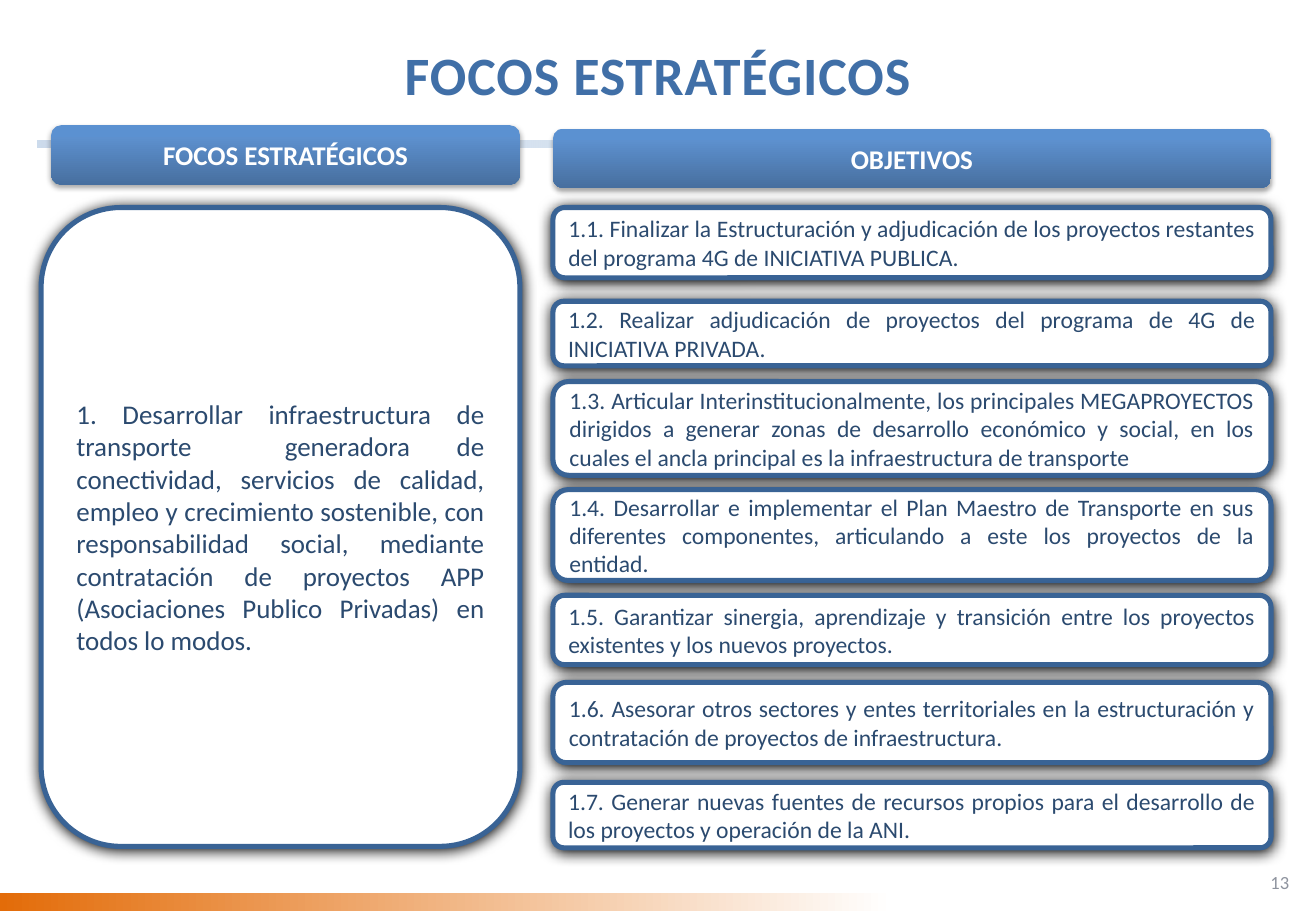
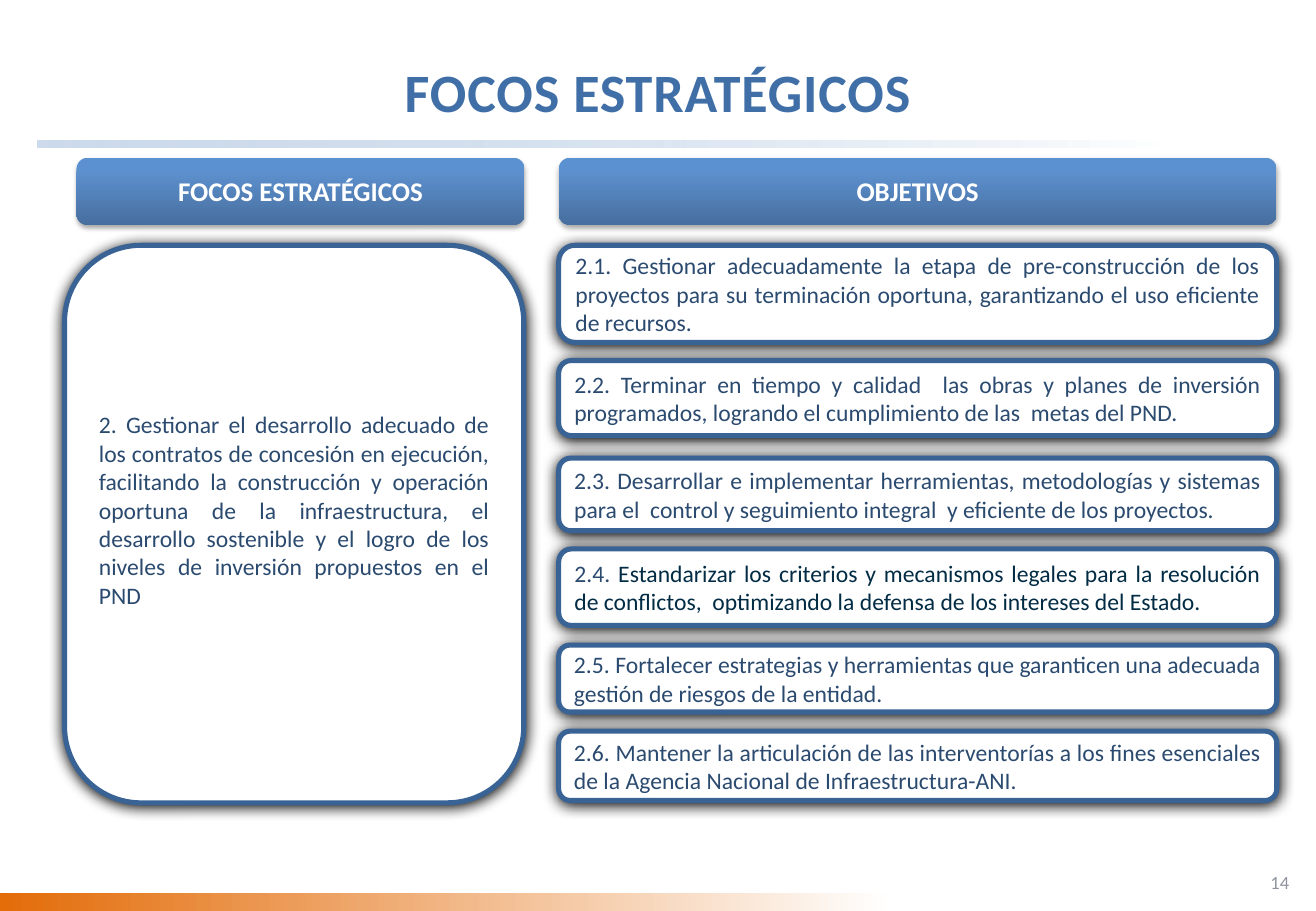
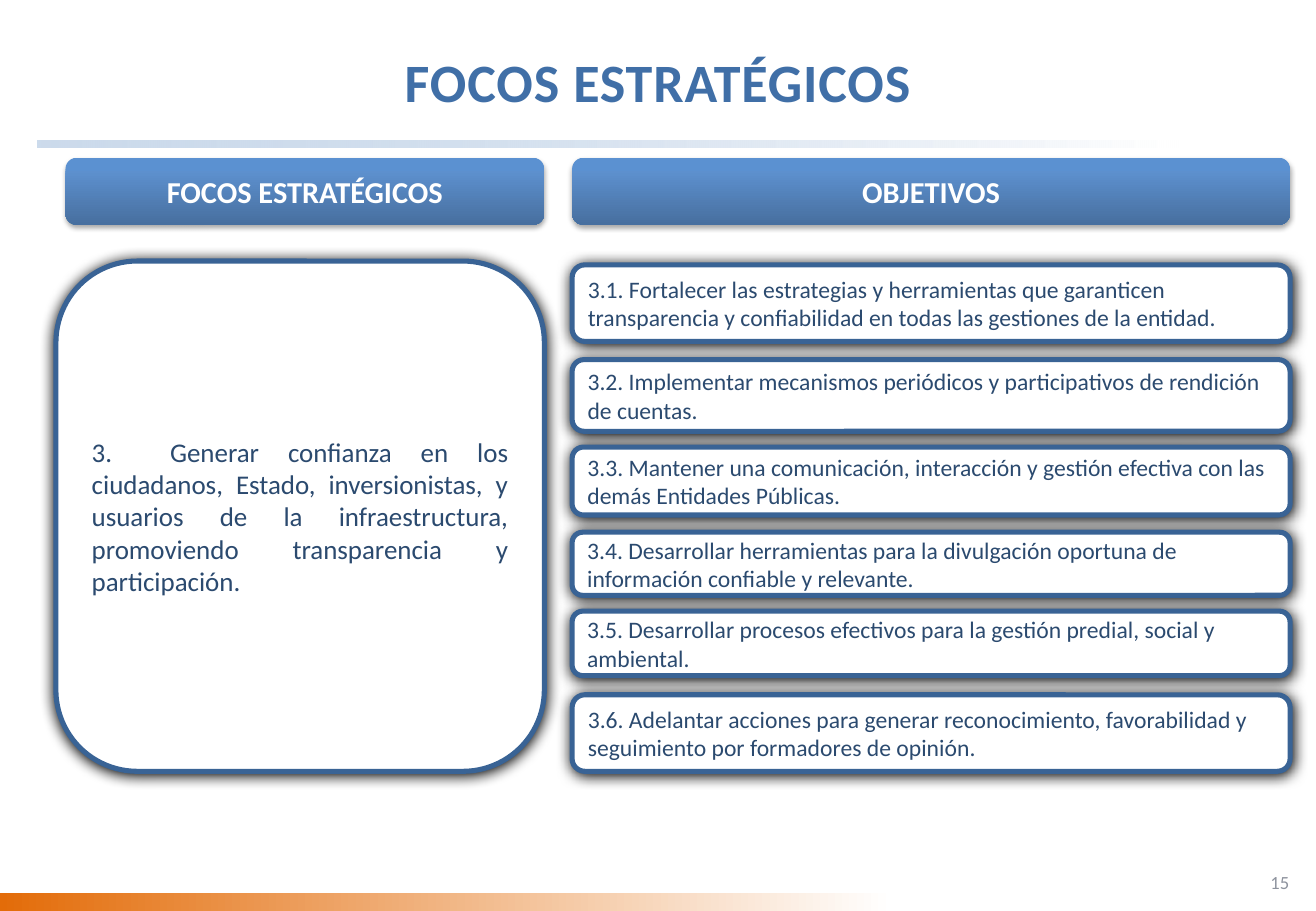
from lxml import etree
from pptx import Presentation
from pptx.dml.color import RGBColor
from pptx.enum.shapes import MSO_SHAPE as SHAPE
from pptx.enum.text import MSO_ANCHOR as ANCHOR, PP_ALIGN as ALIGN
from pptx.oxml.ns import qn
from pptx.util import Cm, Pt

rgb = RGBColor.from_string

FONT = "Calibri"
TITLE, NAVY, DARK, BORDER = "406FA7", "2B4A6F", "022B44", "396395"
WHITE, GREY = "FFFFFF", "8E939E"
# Gradient stops: position %, colour, opacity %
RULE = [(0, "9AB7D9", 50), (100, WHITE, 100)]
FOOTER = [(0, "E36C09", 100), (100, WHITE, 100)]
HEADER = [(0, "5B91D1", 100), (20, "5D90CE", 100), (100, "476F9F", 100)]
# Shadows: blur pt, distance pt, opacity %
SOFT, STRONG = (3.1, 1.8, 35), (8.5, 1, 100)
GOAL_WIDTH = 15.01

SLIDES = [
    dict(
        number="13", title_top=0.74, head_size=16, focus_size=16, goal_align=ALIGN.JUSTIFY,
        heads=[(1.07, 2.62, 9.8, 1.24), (11.56, 2.69, GOAL_WIDTH, 1.24)],
        focus_at=(0.86, 4.34, 10.01, 13.36), focus_bottom=0.13,
        focus="1. Desarrollar infraestructura de transporte  generadora de conectividad, "
              "servicios de calidad, empleo y crecimiento sostenible, con responsabilidad "
              "social, mediante contratación de proyectos APP (Asociaciones Publico Privadas) "
              "en todos lo modos.",
        goals=[
            (4.34, 1.47, "1.1. Finalizar la Estructuración y adjudicación de los proyectos "
                         "restantes del programa 4G de INICIATIVA PUBLICA."),
            (6.3, 1.35, "1.2. Realizar adjudicación de proyectos del programa de 4G de "
                        "INICIATIVA PRIVADA."),
            (7.98, 1.96, "1.3. Articular Interinstitucionalmente, los principales MEGAPROYECTOS "
                         "dirigidos a generar zonas de desarrollo económico y social, en los "
                         "cuales el ancla principal es la infraestructura de transporte"),
            (10.24, 1.9, "1.4. Desarrollar e implementar el Plan Maestro de Transporte en sus "
                         "diferentes componentes, articulando a este los proyectos de la entidad."),
            (12.45, 1.45, "1.5. Garantizar sinergia, aprendizaje y transición entre los "
                          "proyectos existentes y los nuevos proyectos."),
            (14.27, 1.68, "1.6. Asesorar otros sectores y entes territoriales en la "
                          "estructuración y contratación de proyectos de infraestructura."),
            (16.36, 1.37, "1.7. Generar nuevas fuentes de recursos propios para el desarrollo "
                          "de los proyectos y operación de la ANI."),
        ],
    ),
    dict(
        number="14", title_top=1.09, head_size=16, focus_size=14, goal_align=ALIGN.JUSTIFY,
        heads=[(1.6, 3.3, 9.37, 1.4), (11.68, 3.3, GOAL_WIDTH, 1.4)],
        focus_at=(1.35, 5.13, 9.6, 11.66), focus_bottom=0.73,
        focus="2. Gestionar el desarrollo adecuado de los contratos de concesión en ejecución, "
              "facilitando la construcción y operación oportuna de la infraestructura, el "
              "desarrollo sostenible y el logro de los niveles de inversión propuestos en el PND",
        goals=[
            (5.13, 2.03, "2.1. Gestionar adecuadamente la etapa de pre-construcción de los "
                         "proyectos para su terminación oportuna, garantizando el uso eficiente "
                         "de recursos."),
            (7.54, 1.57, "2.2. Terminar en tiempo y calidad  las obras y planes de inversión "
                         "programados, logrando el cumplimiento de las  metas del PND."),
            (9.58, 1.52, "2.3. Desarrollar e implementar herramientas, metodologías y sistemas "
                         "para el  control y seguimiento integral  y eficiente de los proyectos."),
            (11.48, 1.6, "2.4. ",
             "Estandarizar los criterios y mecanismos legales para la resolución de "
             "conflictos,  optimizando la defensa de los intereses del Estado."),
            (13.49, 1.4, "2.5. Fortalecer estrategias y herramientas que garanticen una "
                         "adecuada gestión de riesgos de la entidad."),
            (15.29, 1.45, "2.6. Mantener la articulación de las interventorías a los fines "
                          "esenciales de la Agencia Nacional de Infraestructura-ANI."),
        ],
    ),
    dict(
        number="15", title_top=0.89, head_size=18, focus_size=16, goal_align=ALIGN.LEFT,
        heads=[(1.37, 3.3, 10.01, 1.4), (11.96, 3.3, GOAL_WIDTH, 1.4)],
        focus_at=(1.17, 5.46, 10.21, 10.67), focus_bottom=0.13,
        focus="3.  Generar confianza en los ciudadanos, Estado, inversionistas, y usuarios de "
              "la infraestructura, promoviendo transparencia y participación.",
        goals=[
            (5.54, 1.6, "3.1. Fortalecer las estrategias y herramientas que garanticen "
                        "transparencia y confiabilidad en todas las gestiones de la entidad."),
            (7.52, 1.5, "3.2. Implementar mecanismos periódicos y participativos de rendición "
                        "de cuentas."),
            (9.35, 1.42, "3.3. Mantener una comunicación, interacción y gestión efectiva con "
                         "las demás Entidades Públicas."),
            (11.13, 1.32, "3.4. Desarrollar herramientas para la divulgación oportuna de "
                          "información confiable y relevante."),
            (12.78, 1.35, "3.5. Desarrollar procesos efectivos para la gestión predial, social "
                          "y ambiental."),
            (14.53, 1.6, "3.6. Adelantar acciones para generar reconocimiento, favorabilidad y "
                         "seguimiento por formadores de opinión."),
        ],
    ),
]


def add_box(s, kind, at, stops=None, angle=0, shadow=None):
    """Add a borderless gradient shape, or a white bordered card when no stops are given."""
    sp = s.shapes.add_shape(kind, *map(Cm, at))
    if stops:
        sp.line.fill.background()
        sp.fill.gradient()
        sp.fill.gradient_angle = angle
        stop_list = sp._element.spPr.find(".//" + qn("a:gsLst"))
        for old in list(stop_list):
            stop_list.remove(old)
        for pos, color, alpha in stops:
            gs = etree.SubElement(stop_list, qn("a:gs"), pos=str(pos * 1000))
            clr = etree.SubElement(gs, qn("a:srgbClr"), val=color)
            etree.SubElement(clr, qn("a:alpha"), val=str(alpha * 1000))
    else:
        sp.fill.solid()
        sp.fill.fore_color.rgb = rgb(WHITE)
        sp.line.color.rgb = rgb(BORDER)
        sp.line.width = Pt(3)
    sp.shadow.inherit = False
    if shadow:
        blur, dist, alpha = shadow
        outer = etree.SubElement(sp._element.spPr.find(qn("a:effectLst")), qn("a:outerShdw"),
                                 blurRad=str(Pt(blur)), dist=str(Pt(dist)),
                                 dir="5400000", rotWithShape="0")
        clr = etree.SubElement(outer, qn("a:srgbClr"), val="000000")
        etree.SubElement(clr, qn("a:alpha"), val=str(alpha * 1000))
    return sp


def write(sp, text, size, color, align=ALIGN.CENTER, bold=False, anchor=ANCHOR.MIDDLE):
    """Fill a shape with one paragraph and return the paragraph."""
    tf = sp.text_frame
    tf.word_wrap = True
    tf.vertical_anchor = anchor
    p = tf.paragraphs[0]
    p.alignment = align
    p.font.name, p.font.size, p.font.bold = FONT, Pt(size), bold
    p.font.color.rgb = rgb(color)
    r = p.add_run()
    r.text = text
    r.font.color.rgb = rgb(color)
    return p


prs = Presentation()
prs.slide_width, prs.slide_height = Cm(27.51), Cm(19.05)

for page in SLIDES:
    s = prs.slides.add_slide(prs.slide_layouts[6])
    add_box(s, SHAPE.RECTANGLE, (0.79, 2.95, 23.85, 0.13), RULE)
    add_box(s, SHAPE.RECTANGLE, (0, 18.67, 18.67, 0.38), FOOTER)
    number = s.shapes.add_textbox(Cm(26.16), Cm(17.93), Cm(1.19), Cm(1.02))
    write(number, page["number"], 11, GREY)

    title = s.shapes.add_textbox(0, Cm(page["title_top"]), prs.slide_width, Cm(1.63))
    p = write(title, "FOCOS ESTRATÉGICOS", 32, TITLE, bold=True, anchor=ANCHOR.TOP)
    p.runs[0]._r.get_or_add_rPr().set("spc", "50")

    for at, text in zip(page["heads"], ("FOCOS ESTRATÉGICOS", "OBJETIVOS")):
        head = add_box(s, SHAPE.ROUNDED_RECTANGLE, at, HEADER, 270, SOFT)
        write(head, text, page["head_size"], WHITE, bold=True)

    focus = add_box(s, SHAPE.ROUNDED_RECTANGLE, page["focus_at"], shadow=STRONG)
    write(focus, page["focus"], page["focus_size"], NAVY, ALIGN.JUSTIFY)
    focus.text_frame.margin_bottom = Cm(page["focus_bottom"])

    goal_left = page["heads"][1][0]
    for top, height, text, *dark_text in page["goals"]:
        goal = add_box(s, SHAPE.ROUNDED_RECTANGLE, (goal_left, top, GOAL_WIDTH, height),
                       shadow=STRONG)
        p = write(goal, text, 14, NAVY, page["goal_align"])
        for extra in dark_text:
            r = p.add_run()
            r.text = extra
            r.font.color.rgb = rgb(DARK)

prs.save("out.pptx")
